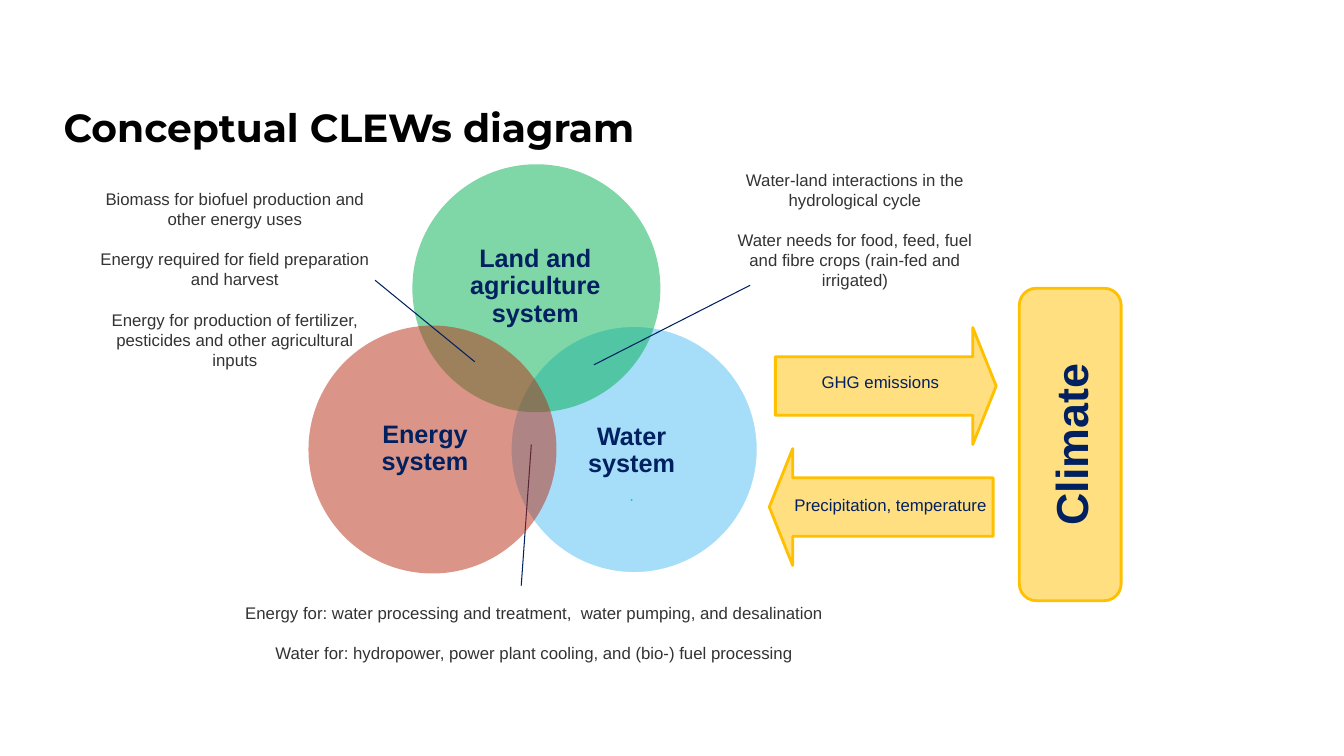
from lxml import etree
from pptx import Presentation
from pptx import util as u
from pptx.dml.color import RGBColor
from pptx.enum import shapes, text
from pptx.oxml import ns

NAVY, GREY, GOLD = "002060", "333333", "FFC000"
KIND = shapes.MSO_SHAPE
MID = text.PP_ALIGN.CENTER
LEFT = text.PP_ALIGN.LEFT


def hue(code):
    return RGBColor.from_string(code)


def area(*box):
    return [u.Inches(n) for n in box]


class Board:
    """Holds the deck, its current slide and the shared style."""

    def __init__(self):
        self.deck = Presentation()
        self.deck.slide_width, self.deck.slide_height = area(13.33, 7.5)
        self.slide = self.deck.slides.add_slide(self.deck.slide_layouts[5])
        self.font = "Arial"

    def run(self, para, words, size, color, bold=False, font=None):
        run = para.add_run()
        run.text = words
        run.font.name = font or self.font
        run.font.size = u.Pt(size)
        run.font.bold = bold
        run.font.color.rgb = hue(color)

    def title(self, words, *box):
        head = self.slide.shapes.title
        head.left, head.top, head.width, head.height = area(*box)
        frame = head.text_frame
        frame.auto_size = text.MSO_AUTO_SIZE.NONE
        frame.vertical_anchor = text.MSO_ANCHOR.TOP
        para = frame.paragraphs[0]
        para.alignment = LEFT
        self.run(para, words, 28, "000000", True, "Montserrat")

    def note(self, box, *lines, color=GREY, align=MID):
        frame = self.slide.shapes.add_textbox(*area(*box)).text_frame
        frame.word_wrap = True
        for i, line in enumerate(lines):
            para = frame.add_paragraph() if i else frame.paragraphs[0]
            para.alignment = align
            if i:
                para.space_before = u.Pt(14.4)
            self.run(para, line, 12, color)

    def label(self, box, *lines):
        """Add centred text without insets; each line is (words, size, color, bold)."""
        frame = self.slide.shapes.add_textbox(*area(*box)).text_frame
        frame.word_wrap = True
        frame.vertical_anchor = text.MSO_ANCHOR.MIDDLE
        frame.margin_left = frame.margin_right = 0
        frame.margin_top = frame.margin_bottom = 0
        for i, line in enumerate(lines):
            para = frame.add_paragraph() if i else frame.paragraphs[0]
            para.alignment = MID
            para.line_spacing = 0.9
            para.space_after = u.Pt(6)
            self.run(para, *line)

    def shape(self, kind, box, fill, edge=None):
        """Add a shape with a half transparent fill."""
        item = self.slide.shapes.add_shape(kind, *area(*box))
        item.shadow.inherit = False
        item.fill.solid()
        item.fill.fore_color.rgb = hue(fill)
        tint = item._element.spPr.find(ns.qn("a:solidFill"))[0]
        etree.SubElement(tint, ns.qn("a:alpha"), val="50000")
        if edge:
            item.line.color.rgb = hue(edge)
            item.line.width = u.Pt(2)
        else:
            item.line.fill.background()
        return item

    def circle(self, left, top, fill, edge=None):
        self.shape(KIND.OVAL, (left, top, 2.46, 2.46), fill, edge)

    def arrow(self, box, turn=0):
        item = self.shape(KIND.RIGHT_ARROW, box, GOLD, GOLD)
        item.adjustments[0], item.adjustments[1] = 0.5, 0.2
        item.rotation = turn

    def pillar(self, words, *box):
        item = self.shape(KIND.ROUNDED_RECTANGLE, box, GOLD, GOLD)
        frame = item.text_frame
        frame.vertical_anchor = text.MSO_ANCHOR.MIDDLE
        frame._txBody.bodyPr.set("vert", "vert270")
        para = frame.paragraphs[0]
        para.alignment = MID
        self.run(para, words, 32, NAVY, True)

    def line(self, *ends):
        item = self.slide.shapes.add_connector(
            shapes.MSO_CONNECTOR.STRAIGHT, *area(*ends))
        item.line.color.rgb = hue(NAVY)
        item.line.width = u.Pt(0.75)
        etree.SubElement(item._element.spPr, ns.qn("a:effectLst"))


def main():
    board = Board()
    board.title("Conceptual CLEWs diagram", 0.53, 0.97, 12.2, 0.57)

    board.circle(5.06, 3.23, "4FBFF6", "FFFFFF")
    board.label((5.53, 3.93, 1.47, 1.35), ("Water system", 18, NAVY, True),
                (".", 12, "1FBBEE"))
    board.circle(4.09, 1.63, "00B050")
    board.label((4.61, 2.15, 1.4, 1.39),
                ("Land and agriculture system", 18, NAVY, True))
    board.note((2.28, 5.93, 6.04, 0.71),
               "Energy for: water processing and treatment,  water pumping, and desalination",
               "Water for: hydropower, power plant cooling, and (bio-) fuel processing")
    board.line(5.17, 5.81, 5.27, 4.41)
    board.circle(3.06, 3.23, "B92C12")
    board.label((3.39, 3.81, 1.65, 1.29), ("Energy system", 18, NAVY, True))

    board.note((7.06, 1.63, 2.84, 1.31),
               "Water-land interactions in the hydrological cycle",
               "Water needs for food, feed, fuel and fibre crops (rain-fed and irrigated)")
    board.line(7.44, 2.83, 5.89, 3.62)
    board.note((0.85, 1.82, 2.96, 1.92),
               "Biomass for biofuel production and other energy uses",
               "Energy required for field preparation and harvest",
               "Energy for production of fertilizer, pesticides and other agricultural inputs")
    board.line(3.72, 2.78, 4.71, 3.59)

    board.pillar("Climate", 10.11, 2.86, 1.01, 3.1)
    board.arrow((7.69, 3.25, 2.19, 1.16))
    board.arrow((7.63, 4.45, 2.22, 1.16), 180)
    board.note((8.05, 3.64, 1.65, 0.3), "GHG emissions", color=NAVY, align=LEFT)
    board.note((7.78, 4.86, 2.19, 0.3), "Precipitation, temperature",
               color=NAVY, align=LEFT)
    board.deck.save("out.pptx")


if __name__ == "__main__":
    main()
